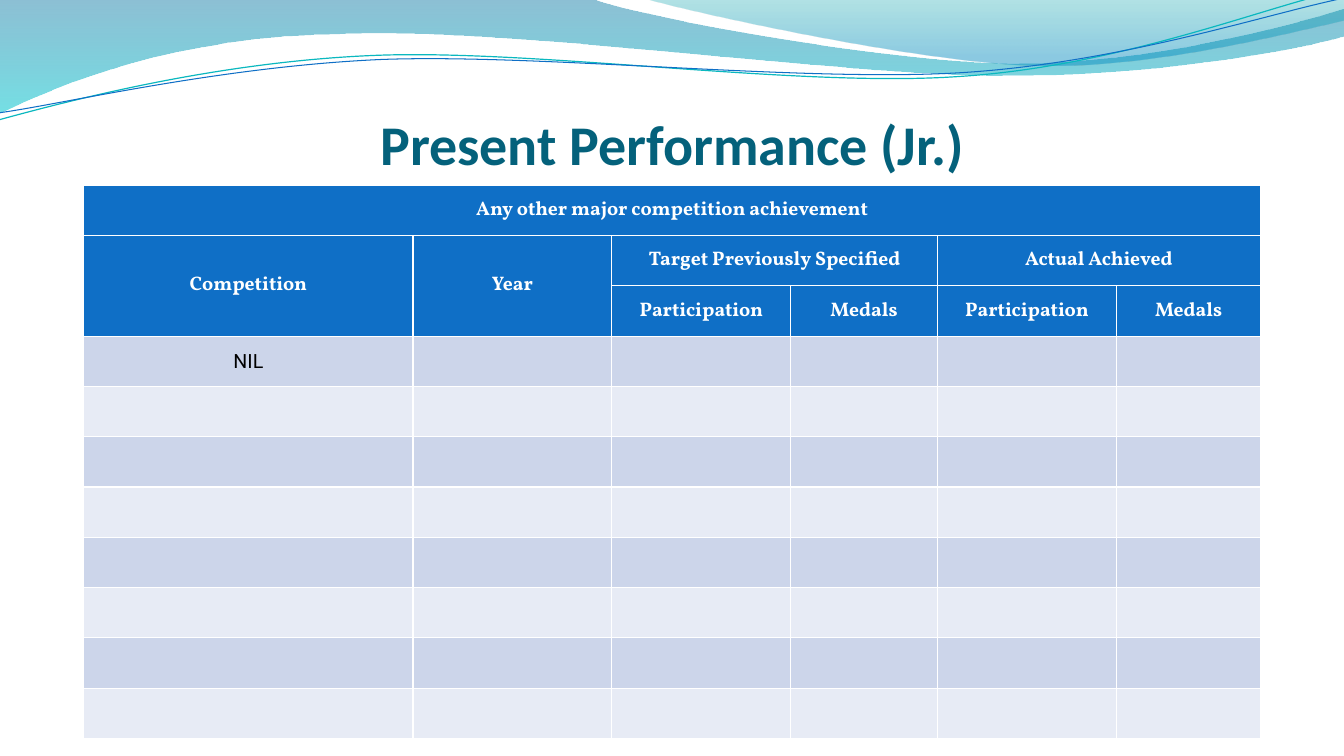
from dataclasses import dataclass
from math import cos, radians, sin

from lxml.etree import SubElement
from pptx import Presentation
from pptx.dml.color import RGBColor
from pptx.enum.text import MSO_ANCHOR, PP_ALIGN
from pptx.oxml import parse_xml
from pptx.oxml.ns import nsdecls, qn
from pptx.shapes.autoshape import Shape
from pptx.slide import Slide
from pptx.table import Table, _Cell
from pptx.text.text import TextFrame
from pptx.util import Cm, Pt

Point = tuple[float, float]
Steps = tuple[tuple[Point, ...], ...]


@dataclass(frozen=True)
class Theme:
    """Colours, fonts and type sizes of the slide."""
    title: str = "04617B"
    header: str = "0F6FC6"
    teal: str = "0AB8BF"
    white: str = "FFFFFF"
    black: str = "000000"
    bands: tuple[str, str] = ("CCD5EA", "E7EBF5")
    title_font: str = "Calibri"
    header_font: str = "Vollkorn"
    body_font: str = "Roboto"
    title_size: int = 40
    table_size: int = 14


@dataclass(frozen=True)
class Stop:
    """One gradient stop; position and opacity are fractions."""
    position: float
    color: str
    opacity: float


@dataclass(frozen=True)
class Wave:
    """A filled wave: each step holds one line point or three curve points."""
    start: Point
    steps: Steps
    stops: tuple[Stop, Stop]


@dataclass(frozen=True)
class Ripple:
    """A thin curved line across the slide, turned about its centre."""
    start: Point
    steps: Steps
    center: Point
    color: str
    width: float


@dataclass(frozen=True)
class Header:
    """A header cell with its place and span."""
    text: str
    row: int
    column: int
    rows: int = 1
    columns: int = 1


THEME = Theme()
TILT = 2.7
HEADER_ROWS, ROW_COUNT, TABLE_HEIGHT = 3, 11, 13.94
COLUMN_WIDTHS = (8.3, 5.01, 4.51, 3.69, 4.52, 3.63)

WAVES = (
    Wave((0, 0), (
        ((14.91, -0.03),),
        ((16.1, 0.43), (22.48, 1.6), (25.68, 1.6)),
        ((28.91, 1.6), (32.46, 0.66), (33.86, 0.23)),
        ((33.91, 0.91),),
        ((33.3, 1.12), (29.46, 1.93), (25.25, 1.91)),
        ((21.06, 1.91), (12.93, 0.71), (8.71, 0.86)),
        ((4.37, 0.91), (1.55, 2.11), (-0.03, 2.87)),
        ((0, 0),),
    ), (Stop(0, "0074A1", 0.45), Stop(1, "00C6CF", 0.55))),
    Wave((16.23, -0.03), (
        ((17.25, 0.28), (23.09, 1.57), (26.04, 1.65)),
        ((28.98, 1.75), (32.56, 0.81), (33.86, 0.53)),
        ((33.86, 0),),
        ((16.23, -0.03),),
    ), (Stop(0, "00A1A9", 0.3), Stop(0.8, "008BBF", 0.45))),
)
RIPPLES = (
    Ripple((-0.03, 3.02), (
        ((1.63, 2.57), (5.36, 1.57), (9.37, 1.4)),
        ((13.39, 1.22), (20.07, 2.21), (24.13, 1.93)),
        ((28.19, 1.68), (31.8, 0.2), (33.81, -0.25)),
    ), (16.89, 1.46), THEME.teal, 0.85),
    Ripple((0, 2.84), (
        ((1.6, 2.62), (5.54, 1.68), (9.6, 1.5)),
        ((13.64, 1.35), (20.22, 2.08), (24.26, 1.83)),
        ((28.32, 1.57), (31.88, 0.36), (33.88, -0.05)),
    ), (16.94, 1.5), THEME.header, 0.75),
)
HEADERS = (
    Header("Any other major competition achievement", 0, 0, columns=6),
    Header("Competition", 1, 0, rows=2),
    Header("Year", 1, 1, rows=2),
    Header("Target Previously Specified", 1, 2, columns=2),
    Header("Actual Achieved", 1, 4, columns=2),
    Header("Participation", 2, 2),
    Header("Medals", 2, 3),
    Header("Participation", 2, 4),
    Header("Medals", 2, 5),
)


def turn(point: Point, center: Point) -> Point:
    """Turn a point clockwise about a centre by the tilt."""
    x, y = point[0] - center[0], point[1] - center[1]
    sine, cosine = sin(radians(TILT)), cos(radians(TILT))
    return center[0] + x * cosine - y * sine, center[1] + x * sine + y * cosine


def draw_outline(slide: Slide, start: Point, steps: Steps, close: bool) -> Shape:
    """Draw lines and cubic curves as one freeform."""
    places = [(Cm(x), Cm(y)) for x, y in (start, *(point for step in steps for point in step))]
    builder = slide.shapes.build_freeform(*places[0])
    builder.add_line_segments(places[1:], close=close)
    shape = builder.convert_to_shape()
    shape.shadow.inherit = False
    segments = iter(list(shape._element.iter(qn("a:lnTo"))))
    for step in steps:
        group = [next(segments) for _ in step]
        if len(group) == 3:
            curve = parse_xml(f'<a:cubicBezTo {nsdecls("a")}/>')
            group[0].addprevious(curve)
            for segment in group:
                curve.append(segment[0])
                segment.getparent().remove(segment)
    return shape


def draw_wave(slide: Slide, wave: Wave) -> None:
    """Draw a wave with a translucent gradient running downwards."""
    shape = draw_outline(slide, wave.start, wave.steps, close=True)
    shape.line.fill.background()
    shape.fill.gradient()
    shape.fill.gradient_angle = 270
    for target, stop in zip(shape.fill.gradient_stops, wave.stops):
        target.position = stop.position
        target.color.rgb = RGBColor.from_string(stop.color)
    colors = shape._element.spPr.iter(qn("a:srgbClr"))
    for color, stop in zip(colors, wave.stops):
        SubElement(color, qn("a:alpha"), val=str(round(stop.opacity * 100000)))


def draw_ripple(slide: Slide, ripple: Ripple) -> None:
    """Draw a thin open curve, levelled first and then rotated back."""
    steps = tuple(tuple(turn(point, ripple.center) for point in step) for step in ripple.steps)
    shape = draw_outline(slide, turn(ripple.start, ripple.center), steps, close=False)
    shape.rotation = 360 - TILT
    shape.fill.background()
    shape.line.color.rgb = RGBColor.from_string(ripple.color)
    shape.line.width = Pt(ripple.width)


def write(frame: TextFrame, text: str, font: str, size: int, color: str, bold: bool) -> None:
    """Write one centred paragraph and format it."""
    frame.text = text
    paragraph = frame.paragraphs[0]
    paragraph.alignment = PP_ALIGN.CENTER
    style = paragraph.runs[0].font
    style.name, style.size, style.bold = font, Pt(size), bold
    style.color.rgb = RGBColor.from_string(color)


def draw_title(slide: Slide) -> None:
    """Draw the slide title."""
    frame = slide.shapes.add_textbox(Cm(5.51), Cm(1.96), Cm(22.86), Cm(2.49)).text_frame
    frame.word_wrap = True
    frame.vertical_anchor = MSO_ANCHOR.BOTTOM
    frame.margin_left = frame.margin_right = frame.margin_bottom = 0
    write(frame, "Present Performance (Jr.)", THEME.title_font, THEME.title_size, THEME.title, True)


def style_cell(cell: _Cell, color: str) -> None:
    """Give a cell its fill, white borders and middle anchor."""
    properties = cell._tc.get_or_add_tcPr()
    for position, side in enumerate("LRTB"):
        properties.insert(position, parse_xml(
            f'<a:ln{side} {nsdecls("a")} w="{Pt(1)}"><a:solidFill>'
            f'<a:srgbClr val="{THEME.white}"/></a:solidFill></a:ln{side}>'))
    cell.fill.solid()
    cell.fill.fore_color.rgb = RGBColor.from_string(color)
    cell.vertical_anchor = MSO_ANCHOR.MIDDLE


def fill_table(table: Table) -> None:
    """Style the grid, then write its headers and its entry."""
    table.first_row = table.horz_banding = False
    for column, width in zip(table.columns, COLUMN_WIDTHS):
        column.width = Cm(width)
    for index, row in enumerate(table.rows):
        band = THEME.bands[(index - HEADER_ROWS) % 2]
        for cell in row.cells:
            style_cell(cell, THEME.header if index < HEADER_ROWS else band)
    for header in HEADERS:
        cell = table.cell(header.row, header.column)
        if header.rows * header.columns > 1:
            cell.merge(table.cell(header.row + header.rows - 1, header.column + header.columns - 1))
        write(cell.text_frame, header.text, THEME.header_font, THEME.table_size, THEME.white, True)
    entry = table.cell(HEADER_ROWS, 0).text_frame
    write(entry, "NIL", THEME.body_font, THEME.table_size, THEME.black, False)


def main() -> None:
    """Build the slide and save it."""
    presentation = Presentation()
    presentation.slide_width, presentation.slide_height = Cm(33.87), Cm(19.05)
    slide = presentation.slides.add_slide(presentation.slide_layouts[6])
    for wave in WAVES:
        draw_wave(slide, wave)
    for ripple in RIPPLES:
        draw_ripple(slide, ripple)
    draw_title(slide)
    frame = slide.shapes.add_table(ROW_COUNT, len(COLUMN_WIDTHS), Cm(2.11), Cm(4.67),
                                   Cm(sum(COLUMN_WIDTHS)), Cm(TABLE_HEIGHT))
    fill_table(frame.table)
    presentation.save("out.pptx")


if __name__ == "__main__":
    main()
